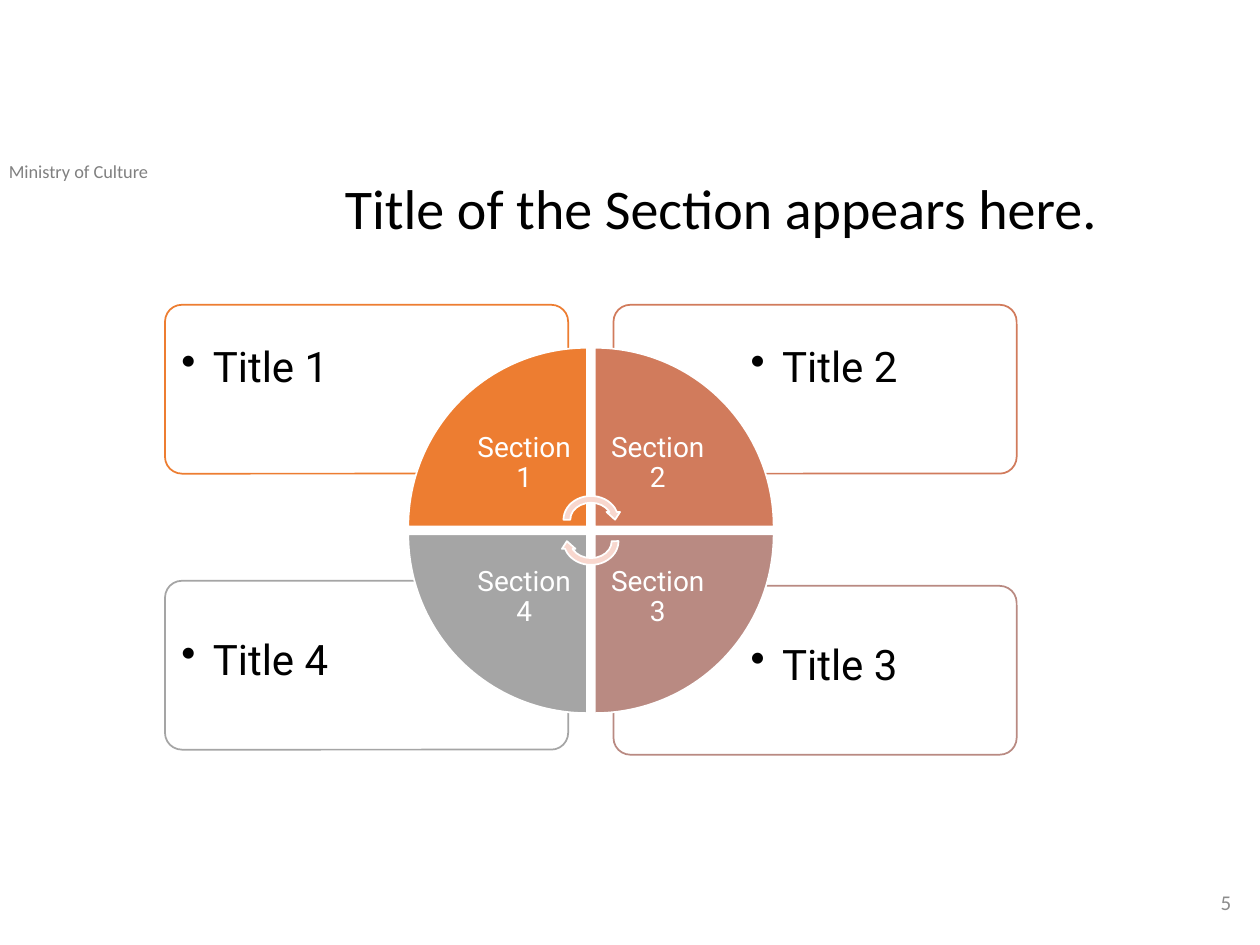
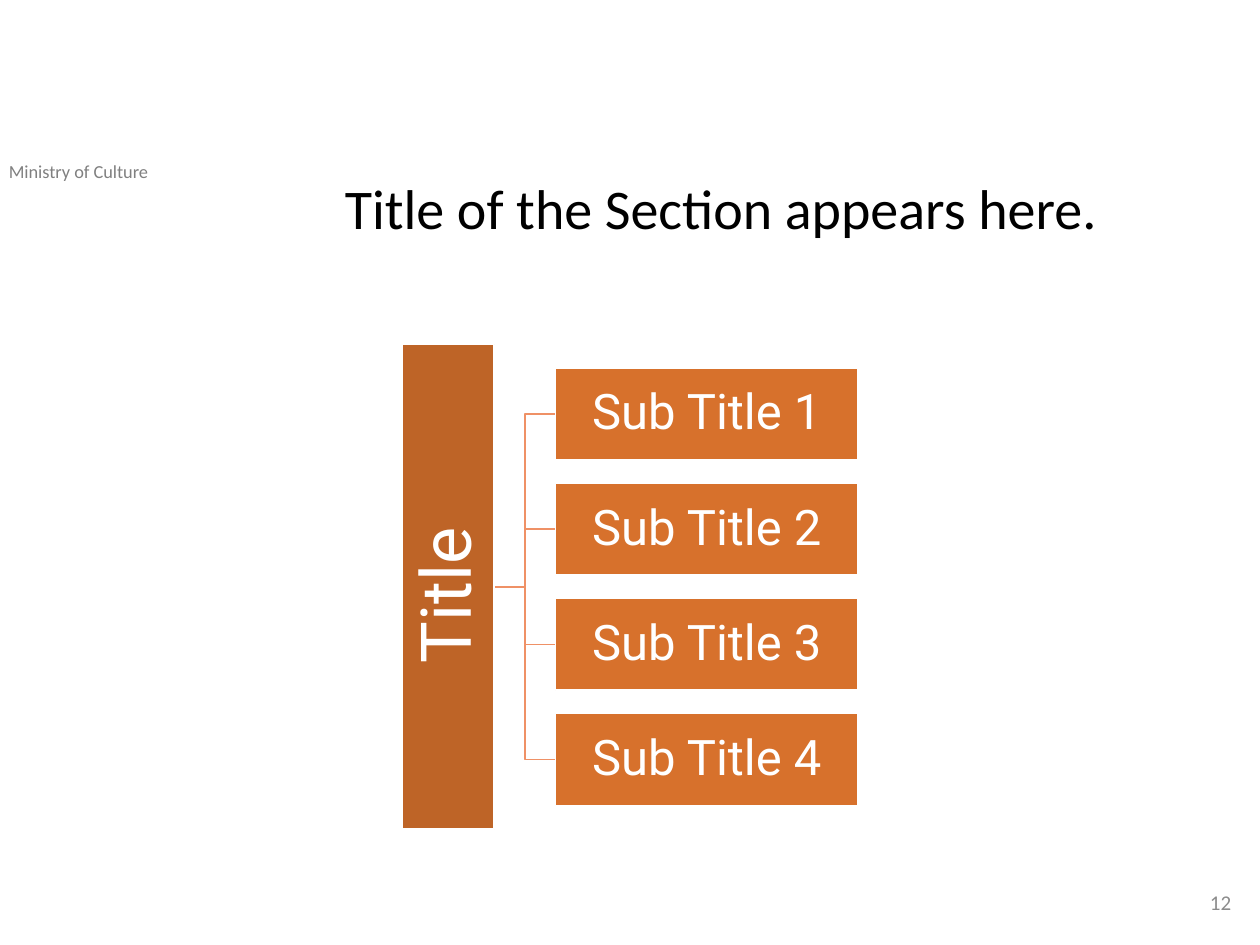
"""Build two section slides: a four-part wheel and a title tree."""
import lxml.etree
import pptx
import pptx.dml.color
import pptx.enum.shapes
import pptx.enum.text
import pptx.oxml.ns
import pptx.util

Pt = pptx.util.Pt
SHAPES = pptx.enum.shapes.MSO_SHAPE
ALIGN = pptx.enum.text.PP_ALIGN
ANCHOR = pptx.enum.text.MSO_ANCHOR

HEADING_FACE = "Calibri"
DIAGRAM_FACE = "Roboto"
BLACK, WHITE = "000000", "FFFFFF"
MINISTRY_GREY, NUMBER_GREY = "808080", "8C8C8C"
BAR_BROWN, SUBTITLE_ORANGE, BRACKET_ORANGE = "BE6427", "D7712C", "EF9166"
ARROW_PINK = "F8D7CE"
SECTION_COLORS = ["ED7D31", "D17B5C", "B98A82", "A5A5A5"]
QUADRANTS = [(0, 0), (1, 0), (1, 1), (0, 1)]


def color(hex_text):
    """Return the RGB colour for a hex string."""
    return pptx.dml.color.RGBColor.from_string(hex_text)


def write(shape, text, size, face, ink, align=ALIGN.LEFT, anchor=ANCHOR.TOP, inset=None, spacing=None, bullet=None):
    """Put one styled paragraph into a shape."""
    frame = shape.text_frame
    frame.word_wrap = True
    frame.vertical_anchor = anchor
    if inset is not None:
        frame.margin_left = frame.margin_top = frame.margin_right = frame.margin_bottom = Pt(inset)
    paragraph = frame.paragraphs[0]
    paragraph.text = text
    paragraph.alignment = align
    if spacing:
        paragraph.line_spacing = spacing
    if bullet:
        properties = paragraph._p.get_or_add_pPr()
        properties.set("marL", str(Pt(18)))
        properties.set("indent", str(-Pt(18)))
        lxml.etree.SubElement(properties, pptx.oxml.ns.qn("a:buChar"), char=bullet)
    paragraph.font.size = Pt(size)
    paragraph.font.name = face
    paragraph.font.color.rgb = color(ink)


def add_text(slide, box, *args, **style):
    """Add a text box with one styled paragraph."""
    write(slide.shapes.add_textbox(*map(Pt, box)), *args, **style)


def add_block(slide, preset, box, fill, line=WHITE, rotation=0):
    """Add a flat preset shape with a thin outline."""
    block = slide.shapes.add_shape(preset, *map(Pt, box))
    block.shadow.inherit = False
    block.fill.solid()
    block.fill.fore_color.rgb = color(fill)
    block.line.color.rgb = color(line)
    block.line.width = Pt(1)
    block.rotation = rotation
    return block


def add_section_slide(deck, number):
    """Add a blank slide with ministry name, section title and slide number."""
    slide = deck.slides.add_slide(deck.slide_layouts[6])
    add_text(slide, (-2, 88, 157, 20), "Ministry of Culture", 10.5, HEADING_FACE, MINISTRY_GREY)
    add_text(slide, (190, 100, 471, 57), "Title of the Section appears here.", 32, HEADING_FACE, BLACK, spacing=0.9)
    add_text(slide, (548.6, 501, 162, 29), str(number), 12, HEADING_FACE, NUMBER_GREY,
             align=ALIGN.RIGHT, anchor=ANCHOR.MIDDLE)
    return slide


def add_card(slide, box, title, outline, column, row):
    """Add a rounded card with its bulleted title in the outer corner."""
    left, top, width, height = box
    card = add_block(slide, SHAPES.ROUNDED_RECTANGLE, box, WHITE, outline)
    card.adjustments[0] = 0.1
    title_width, title_height, margin = 157, 68.4, 2.2
    title_left = left + (width - title_width - margin if column else margin)
    title_top = top + (height - title_height - margin if row else margin)
    add_text(slide, (title_left, title_top, title_width, title_height), title, 24, DIAGRAM_FACE, BLACK,
             anchor=ANCHOR.TOP if row else ANCHOR.MIDDLE, inset=7.2, spacing=0.9, bullet="•")


def add_wheel(slide, box):
    """Add the wheel of four labelled wedges with two turning arrows."""
    left, top, size, _ = box
    wedge, label = 102.2, 72
    step = size - wedge
    for index, (column, row) in enumerate(QUADRANTS):
        wedge_left, wedge_top = left + column * step, top + row * step
        add_block(slide, SHAPES.PIE_WEDGE, (wedge_left, wedge_top, wedge, wedge),
                  SECTION_COLORS[index], rotation=90 * index)
        label_left = wedge_left + (0 if column else wedge - label)
        label_top = wedge_top + (0 if row else wedge - label)
        add_text(slide, (label_left, label_top, label, label), f"Section {index + 1}", 16, DIAGRAM_FACE, WHITE,
                 align=ALIGN.CENTER, anchor=ANCHOR.MIDDLE, inset=8.6, spacing=0.9)
    arrow_width, arrow_height = 35.3, 31
    arrow_left = left + (size - arrow_width) / 2
    for arrow_top, turn in ((82.8, 0), (95, 180)):
        add_block(slide, SHAPES.CIRCULAR_ARROW, (arrow_left, top + arrow_top, arrow_width, arrow_height),
                  ARROW_PINK, rotation=turn)


def add_cycle(slide, box):
    """Add four cards around the section wheel."""
    left, top, width, height = box
    card_width, card_height = 230.4, 96.5
    card_tops = [0, 0, height - card_height, height - card_height - 2.9]
    for index, (column, row) in enumerate(QUADRANTS):
        card_left = left + column * (width - card_width)
        add_card(slide, (card_left, top + card_tops[index], card_width, card_height),
                 f"Title {index + 1}", SECTION_COLORS[index], column, row)
    add_wheel(slide, (left + 139, top + 24.5, 208.8, 208.8))


def add_bracket(slide, start, end):
    """Add an elbow line that turns halfway between two points."""
    middle = (start[0] + end[0]) / 2
    outline = slide.shapes.build_freeform(Pt(start[0]), Pt(start[1]))
    corners = [(middle, start[1]), (middle, end[1]), end]
    outline.add_line_segments([(Pt(x), Pt(y)) for x, y in corners], close=False)
    bracket = outline.convert_to_shape()
    bracket.shadow.inherit = False
    bracket.fill.background()
    bracket.line.color.rgb = color(BRACKET_ORANGE)
    bracket.line.width = Pt(1)


def add_tree(slide, box, title, subtitles):
    """Add an upright title bar bracketed to a column of subtitles."""
    left, top, width, height = box
    bar, subtitle_width, pitch = 52.6, 172.8, 65.8
    center = top + height / 2
    subtitle_left = left + width - subtitle_width
    first_center = center - pitch * (len(subtitles) - 1) / 2
    centers = [first_center + pitch * index for index in range(len(subtitles))]
    for subtitle_center in centers:
        add_bracket(slide, (left + bar, center), (subtitle_left, subtitle_center))
    title_bar = add_block(slide, SHAPES.RECTANGLE, (left + (bar - height) / 2, center - bar / 2, height, bar),
                          BAR_BROWN, rotation=270)
    centered = dict(align=ALIGN.CENTER, anchor=ANCHOR.MIDDLE, inset=2, spacing=0.9)
    write(title_bar, title, 40, DIAGRAM_FACE, WHITE, **centered)
    for subtitle, subtitle_center in zip(subtitles, centers):
        block = add_block(slide, SHAPES.RECTANGLE, (subtitle_left, subtitle_center - bar / 2, subtitle_width, bar),
                          SUBTITLE_ORANGE)
        write(block, subtitle, 28, DIAGRAM_FACE, WHITE, **centered)


def main():
    """Build and save the deck."""
    deck = pptx.Presentation()
    deck.slide_width, deck.slide_height = Pt(720), Pt(540)
    add_cycle(add_section_slide(deck, 5), (94.3, 174.2, 486.7, 257.1))
    add_tree(add_section_slide(deck, 12), (229.9, 196.8, 260.4, 277), "Title ",
             [f"Sub Title {number}" for number in range(1, 5)])
    deck.save("out.pptx")


if __name__ == "__main__":
    main()
